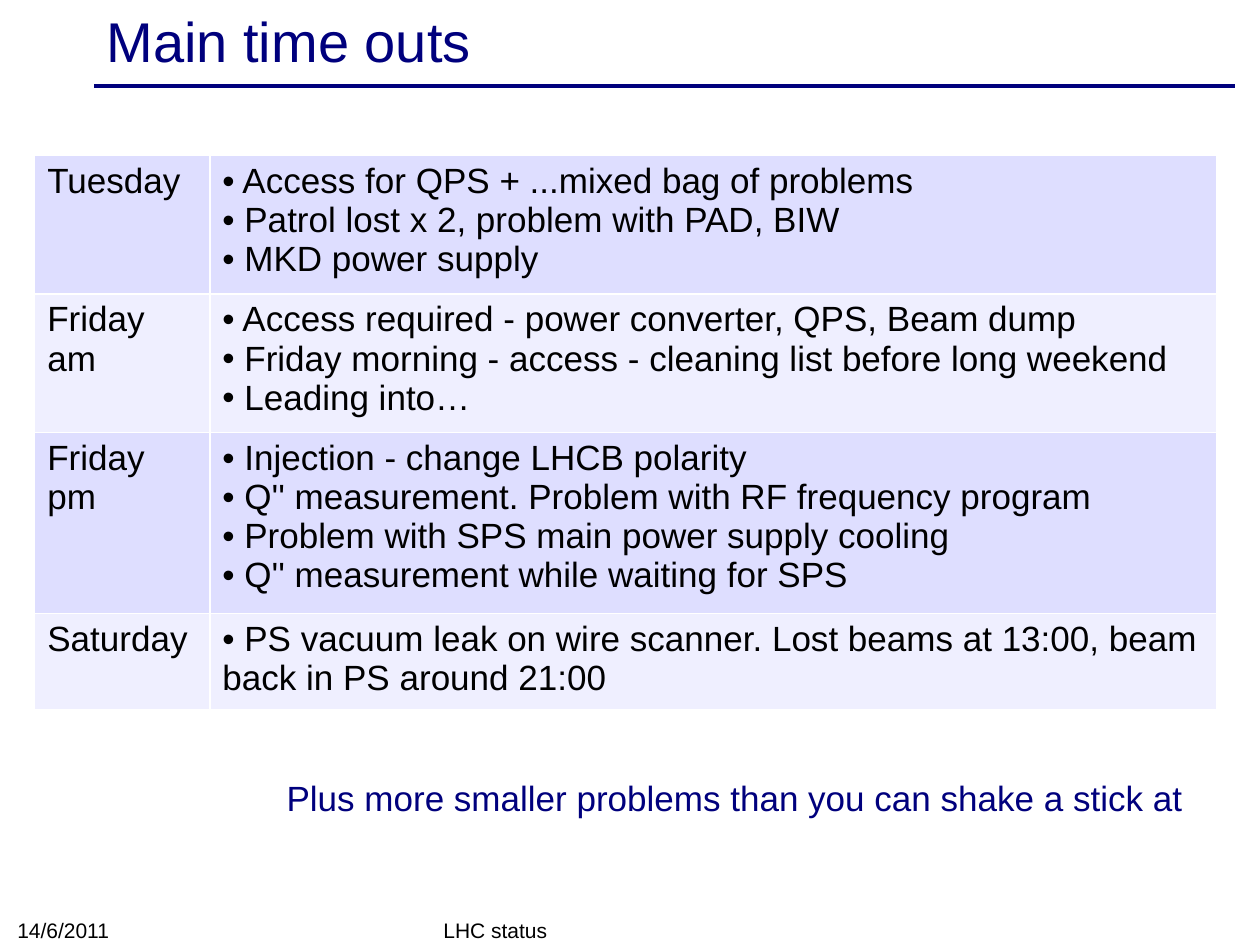
import pptx
import pptx.util
import pptx.dml.color
import pptx.enum.shapes
import pptx.enum.text
from pptx.util import Cm, Pt
from lxml import etree

NAVY, BLACK, WHITE = "00007D", "000000", "FFFFFF"
BANDS = "DEDEFF", "EFEFFF"
ROWS = [
    ("Tuesday", ["Access for QPS + ...mixed bag of problems",
                 "Patrol lost x 2, problem with PAD, BIW",
                 "MKD power supply"]),
    ("Friday am", ["Access required - power converter, QPS, Beam dump",
                   "Friday morning - access - cleaning list before long weekend",
                   "Leading into…"]),
    ("Friday pm", ["Injection - change LHCB polarity",
                   "Q'' measurement. Problem with RF frequency program",
                   "Problem with SPS main power supply cooling",
                   "Q'' measurement while waiting for SPS"]),
    ("Saturday", ["PS vacuum leak on wire scanner. Lost beams at 13:00, "
                  "beam back in PS around 21:00"]),
]
COLS = 3.53, 20.29
LINES = 3, 3, 4, 2
PAD, STEP = 0.25, 1.0

ANCHOR = pptx.enum.text.MSO_ANCHOR
ALIGN = pptx.enum.text.PP_ALIGN
TEXTS = [
    ("Main time outs", (1.9, 0.08, 22.86, 1.45), 32, NAVY, ANCHOR.MIDDLE, ALIGN.LEFT),
    ("LHC status", (8.69, 18.42, 8.05, 0.71), 12, BLACK, ANCHOR.BOTTOM, ALIGN.LEFT),
    ("14/6/2011", (0.1, 18.39, 5.92, 0.74), 12, BLACK, ANCHOR.BOTTOM, ALIGN.LEFT),
    ("Plus more smaller problems than you can shake a stick at",
     (5.11, 15.52, 19.41, 1.12), 20, NAVY, ANCHOR.TOP, ALIGN.CENTER),
]


def rgb(code):
    return pptx.dml.color.RGBColor.from_string(code)


def style(para, size, color, align=ALIGN.LEFT):
    para.alignment = align
    for run in para.runs:
        run.font.name = "Arial"
        run.font.size = Pt(size)
        run.font.color.rgb = rgb(color)


def add(parent, tag, **attrs):
    return etree.SubElement(parent, pptx.oxml.ns.qn(tag), **attrs)


def bullet(para):
    props = para._p.get_or_add_pPr()
    props.set("marL", "0")
    props.set("indent", "0")
    add(props, "a:buFont", typeface="Arial")
    add(props, "a:buChar", char="•")


def border(cell):
    props = cell._tc.get_or_add_tcPr()
    for i, side in enumerate("LRTB"):
        line = add(props, "a:ln" + side, w=str(Pt(1)))
        add(add(line, "a:solidFill"), "a:srgbClr", val=WHITE)
        props.insert(i, line)


def fill(cell, items, color, dots):
    cell.fill.solid()
    cell.fill.fore_color.rgb = rgb(color)
    border(cell)
    cell.text_frame.text = "\n".join(" " + t if dots else t for t in items)
    for para in cell.text_frame.paragraphs:
        if dots:
            bullet(para)
        style(para, 20, BLACK)


def main():
    deck = pptx.Presentation()
    deck.slide_width, deck.slide_height = Cm(25.4), Cm(19.05)
    slide = deck.slides.add_slide(deck.slide_layouts[6])
    shapes = slide.shapes

    rule = shapes.add_connector(pptx.enum.shapes.MSO_CONNECTOR.STRAIGHT,
                                Cm(1.9), Cm(1.73), Cm(24.9), Cm(1.73))
    rule.line.color.rgb = rgb(NAVY)
    rule.line.width = Pt(2)
    add(rule._element.spPr, "a:effectLst")

    for text, place, size, color, anchor, align in TEXTS:
        frame = shapes.add_textbox(*map(Cm, place)).text_frame
        frame.word_wrap = True
        frame.vertical_anchor = anchor
        frame.text = text
        style(frame.paragraphs[0], size, color, align)

    highs = [n * STEP - 0.37 + 2 * PAD - 0.5 for n in LINES]
    table = shapes.add_table(len(ROWS), len(COLS), Cm(0.7), Cm(3.13),
                             Cm(sum(COLS)), Cm(sum(highs))).table
    table.first_row = table.horz_banding = False
    for col, wide in zip(table.columns, COLS):
        col.width = Cm(wide)
    for i, (day, items) in enumerate(ROWS):
        table.rows[i].height = Cm(highs[i])
        color = BANDS[i % 2]
        fill(table.cell(i, 0), [day], color, False)
        fill(table.cell(i, 1), items, color, True)

    deck.save("out.pptx")


if __name__ == "__main__":
    main()
